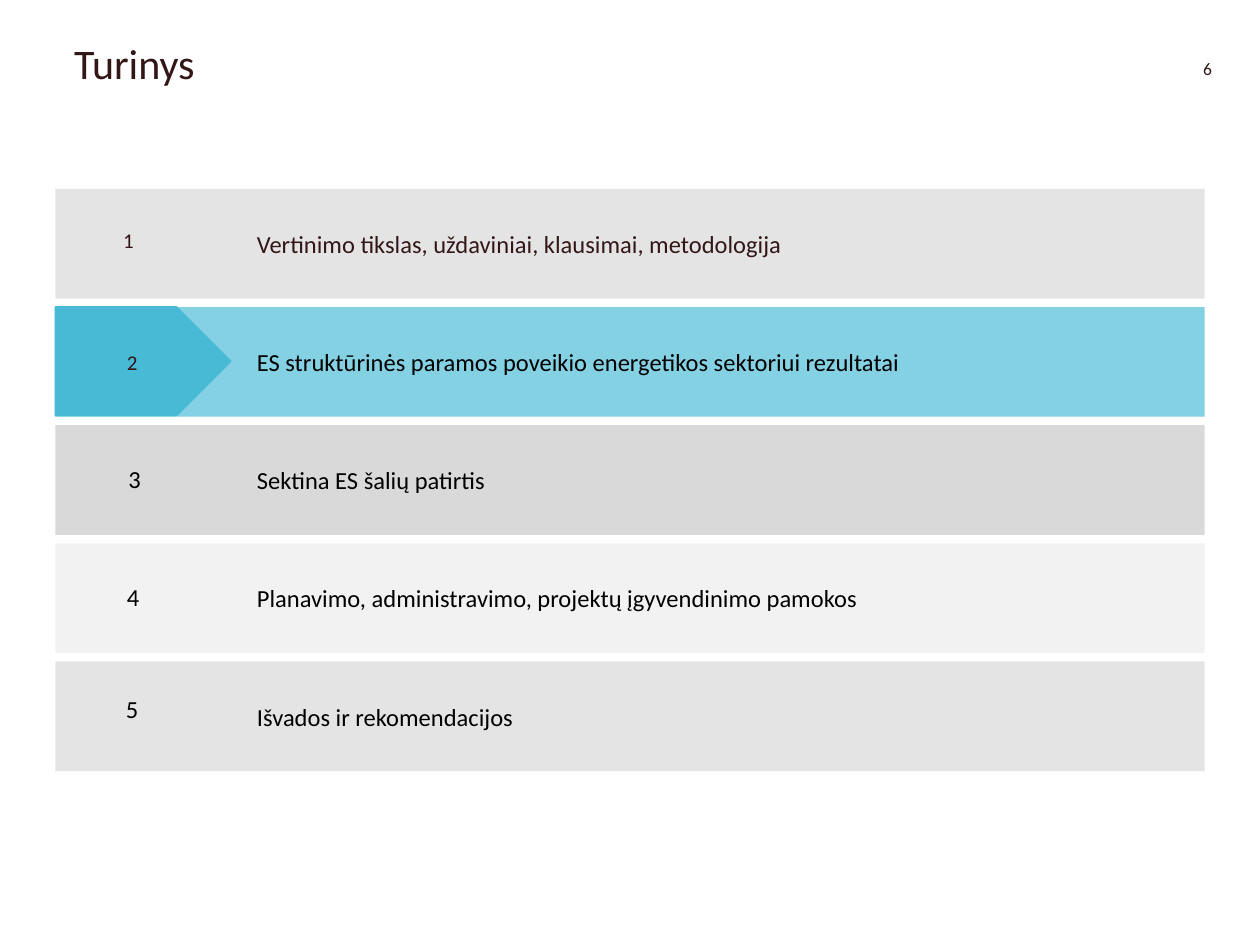
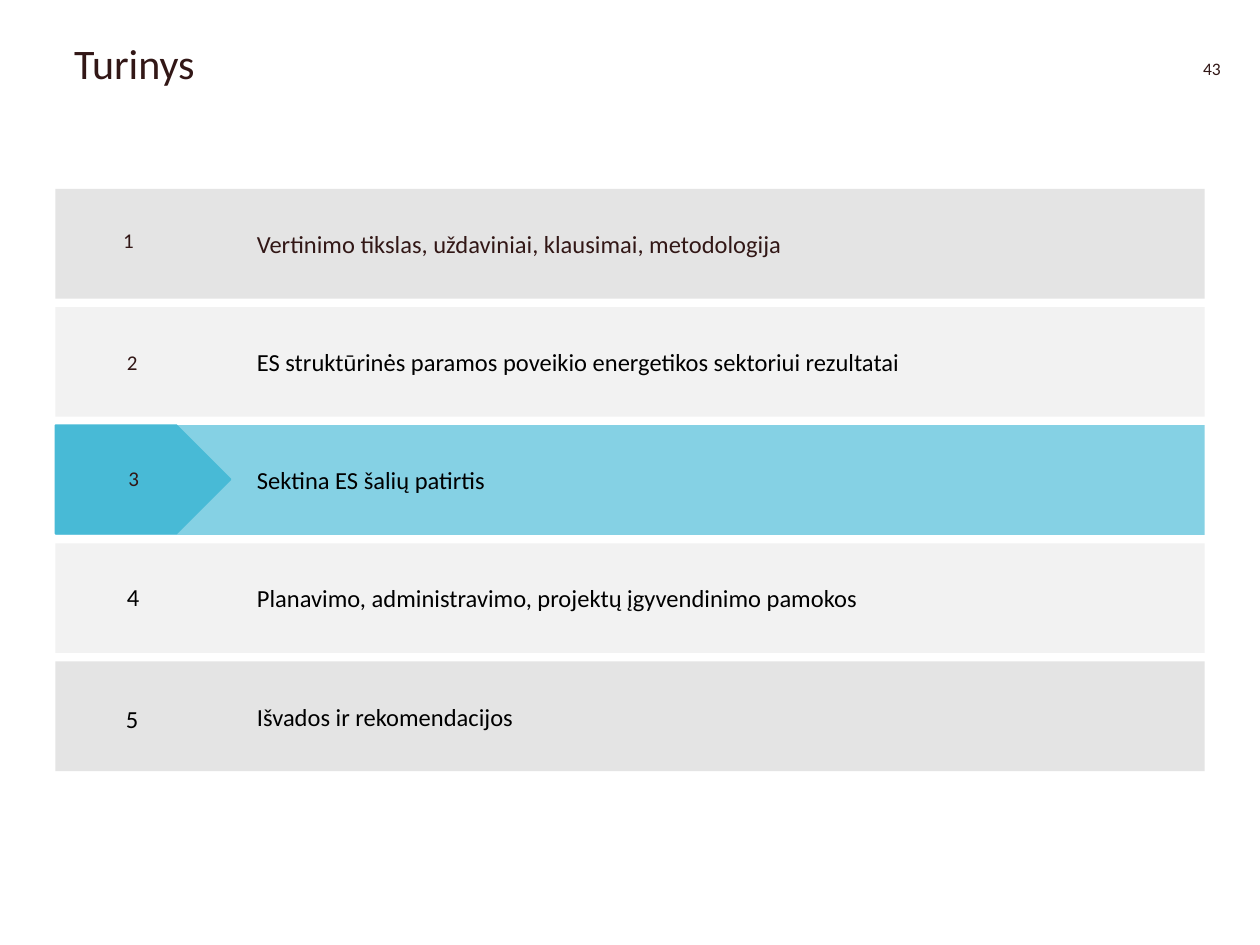
import pptx
import pptx.util
from dataclasses import dataclass
from pptx.dml.color import RGBColor
from pptx.enum.shapes import MSO_SHAPE
from pptx.enum.text import MSO_ANCHOR, PP_ALIGN
from pptx.util import Inches


@dataclass(frozen=True)
class Theme:
    font: str = "Calibri"
    brown: str = "321716"
    black: str = "000000"
    silver: str = "E4E4E4"
    pale: str = "F2F2F2"
    grey: str = "D9D9D9"
    active_band: str = "85D1E4"
    active_arrow: str = "48BAD6"
    title_size: int = 24
    body_size: int = 14
    small_size: int = 12
    page_size: int = 10


THEME = Theme()
BAND_LEFT, BAND_WIDTH, BAND_HEIGHT = 0.44, 9.12, 0.87
FIRST_TOP, LAST_TOP = 1.5, 5.25
TEXT_INDENT = 1.5

# heading, heading colour, band fill, left of the number
SECTIONS = [
    ("Vertinimo tikslas, uždaviniai, klausimai, metodologija", THEME.brown, THEME.silver, 0.88),
    ("ES struktūrinės paramos poveikio energetikos sektoriui rezultatai", THEME.black, THEME.pale, 0.91),
    ("Sektina ES šalių patirtis", THEME.black, THEME.grey, 0.92),
    ("Planavimo, administravimo, projektų įgyvendinimo pamokos", THEME.black, THEME.pale, 0.91),
    ("Išvados ir rekomendacijos", THEME.black, THEME.silver, 0.9),
]
PITCH = (LAST_TOP - FIRST_TOP) / (len(SECTIONS) - 1)

# page number, active section, drop of each number below its band top
AGENDAS = [
    (6, 2, (0.24, 0.27, 0.26, 0.26, 0.21)),
    (43, 3, (0.24, 0.27, 0.25, 0.26, 0.29)),
]


class Deck:
    def __init__(self, theme):
        self.theme = theme
        self.prs = pptx.Presentation()
        self.prs.slide_width, self.prs.slide_height = Inches(10), Inches(7.5)
        self.s = None

    def add_slide(self):
        self.s = self.prs.slides.add_slide(self.prs.slide_layouts[6])

    def fill_text(self, tf, text, size, color, **paragraph_format):
        p = tf.paragraphs[0]
        for name, value in paragraph_format.items():
            setattr(p, name, value)
        r = p.add_run()
        r.text = text
        font = {"name": self.theme.font, "size": pptx.util.Pt(size)}
        for name, value in font.items():
            setattr(r.font, name, value)
        r.font.color.rgb = RGBColor.from_string(color)
        return p

    def text(self, box, text, size, color, wrap=False, **paragraph_format):
        tf = self.s.shapes.add_textbox(*map(Inches, box)).text_frame
        tf.word_wrap = wrap
        self.fill_text(tf, text, size, color, **paragraph_format)

    def shape(self, kind, box, fill, line=None):
        sp = self.s.shapes.add_shape(kind, *map(Inches, box))
        sp.shadow.inherit = False
        sp.fill.solid()
        sp.fill.fore_color.rgb = RGBColor.from_string(fill)
        if line:
            sp.line.color.rgb = RGBColor.from_string(line)
            sp.line.width = pptx.util.Pt(1)
        else:
            sp.line.fill.background()
        return sp

    def band(self, top, heading, color, fill):
        sp = self.shape(MSO_SHAPE.RECTANGLE, (BAND_LEFT, top, BAND_WIDTH, BAND_HEIGHT), fill)
        tf = sp.text_frame
        tf.word_wrap = True
        tf.vertical_anchor = MSO_ANCHOR.MIDDLE
        p = self.fill_text(tf, heading, self.theme.body_size, color,
                           alignment=PP_ALIGN.LEFT, level=3)
        pPr = p._p.get_or_add_pPr()
        pPr.set("marL", str(Inches(TEXT_INDENT)))
        pPr.set("indent", "0")

    def arrow(self, top):
        color = self.theme.active_arrow
        self.shape(MSO_SHAPE.PENTAGON, (BAND_LEFT, top, 1.39, 0.86), color, line=color)

    def number(self, left, top, value, small):
        t = self.theme
        box = (left, top, 0.3, 0.34)
        if small:
            self.text(box, str(value), t.small_size, t.brown, line_spacing=1.1)
        else:
            self.text(box, str(value), t.body_size, t.black)

    def header(self, title, page):
        t = self.theme
        self.text((9.45, 0.41, 0.37, 0.27), str(page), t.page_size, t.brown)
        self.text((0.49, 0.29, 8.82, 1.18), title, t.title_size, t.brown,
                  wrap=True, line_spacing=0.9)


def add_agenda(deck, page, active, drops):
    """Add a contents slide; numbers up to the active section are small."""
    deck.add_slide()
    deck.header("Turinys", page)
    for i, ((heading, color, fill, left), drop) in enumerate(zip(SECTIONS, drops)):
        value, top = i + 1, FIRST_TOP + i * PITCH
        is_active = value == active
        deck.band(top, heading, color, deck.theme.active_band if is_active else fill)
        if is_active:
            deck.arrow(top)
        deck.number(left, top + drop, value, small=value <= active)


def main():
    deck = Deck(THEME)
    for agenda in AGENDAS:
        add_agenda(deck, *agenda)
    deck.prs.save("out.pptx")


if __name__ == "__main__":
    main()
